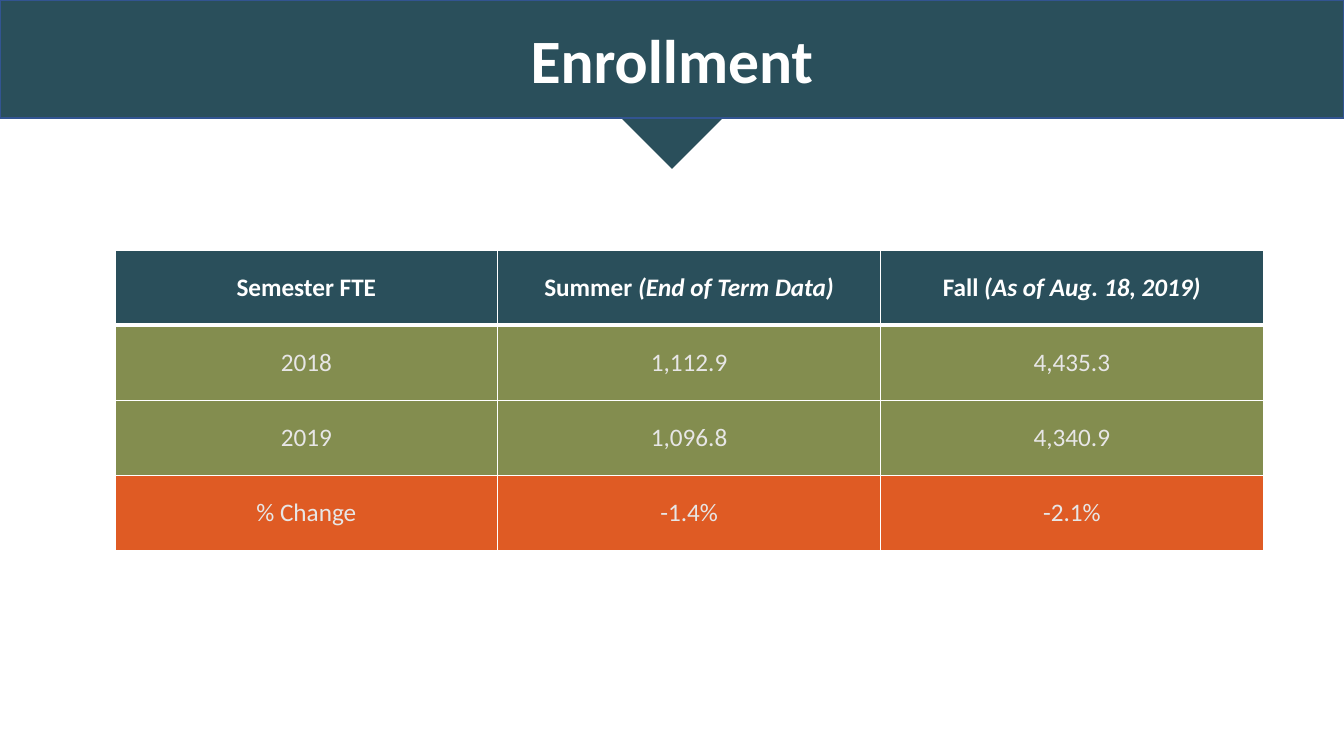
from lxml import etree
from pptx import Presentation
from pptx.dml.color import RGBColor
from pptx.enum.shapes import MSO_SHAPE
from pptx.enum.text import MSO_ANCHOR, PP_ALIGN
from pptx.oxml.ns import qn
from pptx.util import Inches, Pt

RECT = MSO_SHAPE.RECTANGLE
MIDDLE = MSO_ANCHOR.MIDDLE
CENTER = PP_ALIGN.CENTER

TEAL, OLIVE, RUST = "2A4F5B", "838D4F", "DF5B24"
WHITE, PALE, BLUE = "FFFFFF", "E7E6E6", "325491"

HEADS = [
    ("Semester FTE", ""),
    ("Summer ", "(End of Term Data)"),
    ("Fall ", "(As of Aug. 18, 2019)"),
]
ROWS = [
    (OLIVE, ["2018", "1,112.9", "4,435.3"]),
    (OLIVE, ["2019", "1,096.8", "4,340.9"]),
    (RUST, ["% Change", "-1.4%", "-2.1%"]),
]


def color(code):
    """Turn a hex string into a colour."""
    return RGBColor.from_string(code)


def paint(item, code):
    """Give a shape or cell a solid fill."""
    item.fill.solid()
    item.fill.fore_color.rgb = color(code)


def write(frame, *parts, size=18, ink=WHITE, bold=False, font="Calibri"):
    """Write one centred paragraph, with every part after the first in italics."""
    frame.word_wrap = True
    para = frame.paragraphs[0]
    para.alignment = CENTER
    for num, part in enumerate(filter(None, parts)):
        run = para.add_run()
        run.text = part
        run.font.name = font
        run.font.size = Pt(size)
        run.font.bold = bold
        run.font.italic = num > 0
        run.font.color.rgb = color(ink)


def border(cell, base=1):
    """Draw white lines round a cell, with a base line of its own width."""
    props = cell._tc.get_or_add_tcPr()
    for side, width in (("L", 1), ("R", 1), ("T", 1), ("B", base)):
        line = etree.SubElement(props, qn(f"a:ln{side}"), w=str(Pt(width)))
        fill = etree.SubElement(line, qn("a:solidFill"))
        etree.SubElement(fill, qn("a:srgbClr"), val=WHITE)


class Deck:
    """Hold the style and the current slide."""

    def __init__(self):
        """Start a wide deck with one title slide."""
        self.file = Presentation()
        self.file.slide_width = Inches(13.33)
        self.file.slide_height = Inches(7.5)
        self.slide = self.file.slides.add_slide(self.file.slide_layouts[5])

    def pointer(self, left, top, side):
        """Add a square turned on its corner."""
        shape = self.slide.shapes.add_shape(
            RECT, Inches(left), Inches(top), Inches(side), Inches(side))
        shape.rotation = 45
        shape.shadow.inherit = False
        paint(shape, TEAL)
        shape.line.fill.background()

    def banner(self, text, height):
        """Turn the title into a band across the top, in front of the rest."""
        title = self.slide.shapes.title
        title.left = title.top = 0
        title.width, title.height = self.file.slide_width, Inches(height)
        paint(title, TEAL)
        title.line.color.rgb = color(BLUE)
        title.line.width = Pt(1)
        title.text_frame.vertical_anchor = MIDDLE
        write(title.text_frame, text, size=44, bold=True)
        self.slide.shapes._spTree.append(title._element)

    def cell(self, cell, parts, fill, base=1, **style):
        """Fill, edge and write one table cell."""
        border(cell, base)
        paint(cell, fill)
        cell.vertical_anchor = MIDDLE
        write(cell.text_frame, *parts, **style)

    def table(self, left, top, width, height):
        """Add the table of heads and rows."""
        grid = self.slide.shapes.add_table(
            len(ROWS) + 1, len(HEADS), Inches(left), Inches(top),
            Inches(width), Inches(height)).table
        for col, parts in enumerate(HEADS):
            self.cell(grid.cell(0, col), parts, TEAL, base=3, bold=True)
        for row, (fill, texts) in enumerate(ROWS, 1):
            for col, text in enumerate(texts):
                self.cell(grid.cell(row, col), [text], fill, ink=PALE)


def main():
    """Build and save the slide."""
    deck = Deck()
    deck.pointer(6.31, 0.82, 0.71)
    deck.table(1.14, 2.48, 11.39, 2.98)
    deck.banner("Enrollment", 1.17)
    deck.file.save("out.pptx")


if __name__ == "__main__":
    main()
